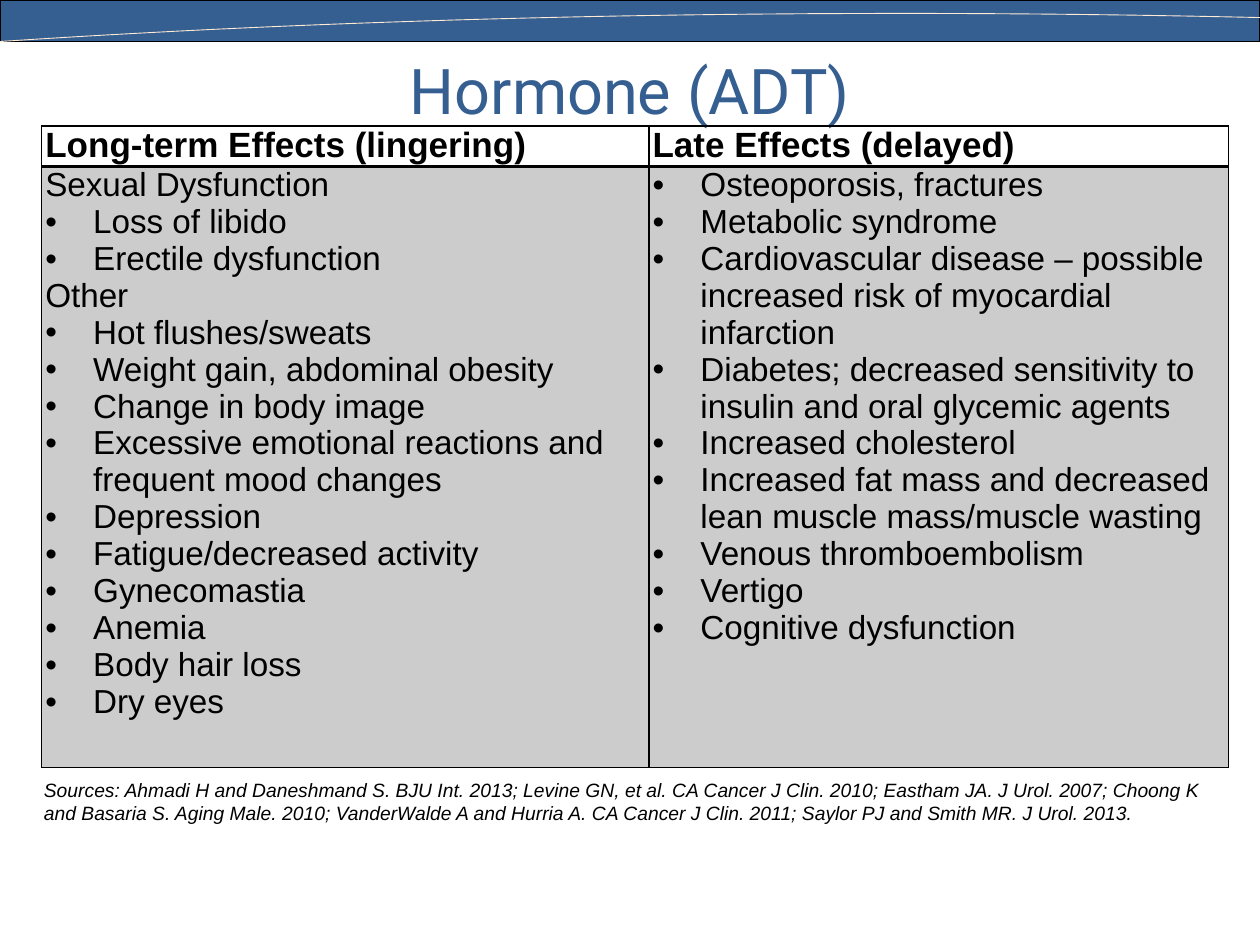
"""Build a slide listing long-term and late effects of hormone therapy (ADT)."""
from pptx import Presentation, util as u
from pptx.dml.color import RGBColor
from pptx.enum import shapes, text
from pptx.oxml import parse_xml
from pptx.oxml.ns import nsdecls

C = {"blue": "365F91", "peach": "FFEAD5", "black": "000000", "grey": "CCCCCC"}
W, H = 10, 7.5
TITLE = "Hormone (ADT)"
COLUMNS = [
    {"head": "Long-term Effects (lingering)", "share": 4.82, "tab": 0.5, "groups": [
        ("Sexual Dysfunction", ["Loss of libido", "Erectile dysfunction"]),
        ("Other", ["Hot flushes/sweats", "Weight gain, abdominal obesity",
                   "Change in body image",
                   "Excessive emotional reactions and frequent mood changes",
                   "Depression", "Fatigue/decreased activity", "Gynecomastia",
                   "Anemia", "Body hair loss", "Dry eyes"])]},
    {"head": "Late Effects (delayed)", "share": 4.6, "tab": None, "groups": [
        (None, ["Osteoporosis, fractures", "Metabolic syndrome",
                "Cardiovascular disease – possible increased risk of myocardial infarction",
                "Diabetes; decreased sensitivity to insulin and oral glycemic agents",
                "Increased cholesterol",
                "Increased fat mass and decreased lean muscle mass/muscle wasting",
                "Venous thromboembolism", "Vertigo", "Cognitive dysfunction"])]},
]
ROWS = [0.32, 4.77]
SOURCES = ("Sources: Ahmadi H and Daneshmand S. BJU Int. 2013; Levine GN, et al. "
           "CA Cancer J Clin. 2010; Eastham JA. J Urol. 2007; Choong K and Basaria S. "
           "Aging Male. 2010; VanderWalde A and Hurria A. CA Cancer J Clin. 2011; "
           "Saylor PJ and Smith MR. J Urol. 2013.")
CURVE = [(W, 0.14), (7.44, 0.08), (3.79, 0.08), (0, 0.33)]
STEPS = 40


def rgb(name):
    return RGBColor.from_string(C[name])


def style(p, size, color="black", font="Arial", bold=False, italic=False):
    for r in p.runs:
        f = r.font
        f.size, f.name, f.bold, f.italic = u.Pt(size), font, bold, italic
        f.color.rgb = rgb(color)


def outline(sp, color, width):
    sp.shadow.inherit = False
    sp.line.color.rgb, sp.line.width = rgb(color), u.Pt(width)


def bullet(p, tab, indent=0.38):
    pPr = p._p.get_or_add_pPr()
    pPr.set("marL", str(u.Inches(indent)))
    pPr.set("indent", str(-u.Inches(indent)))
    pPr.append(parse_xml(f'<a:buFont {nsdecls("a")} typeface="Arial"/>'))
    pPr.append(parse_xml(f'<a:buChar {nsdecls("a")} char="•"/>'))
    if tab:
        pPr.append(parse_xml(f'<a:tabLst {nsdecls("a")}>'
                             f'<a:tab pos="{u.Inches(tab)}" algn="l"/></a:tabLst>'))


def borders(cell, widths):
    tcPr = cell._tc.get_or_add_tcPr()
    for i, (side, width) in enumerate(zip("LRTB", widths)):
        tcPr.insert(i, parse_xml(
            f'<a:ln{side} {nsdecls("a")} w="{u.Pt(width)}"><a:solidFill>'
            f'<a:srgbClr val="{C["black"]}"/></a:solidFill></a:ln{side}>'))


def text_box(s, box, words):
    tf = s.shapes.add_textbox(*map(u.Inches, box)).text_frame
    tf.word_wrap = True
    tf.text = words
    return tf


def banner(s):
    sp = s.shapes.add_shape(shapes.MSO_SHAPE.RECTANGLE, 0, 0, u.Inches(W), u.Inches(0.33))
    sp.fill.solid()
    sp.fill.fore_color.rgb = rgb("blue")
    outline(sp, "black", 0.75)
    pts = []
    for t in (i / STEPS for i in range(STEPS + 1)):
        weights = ((1 - t) ** 3, 3 * t * (1 - t) ** 2, 3 * t * t * (1 - t), t ** 3)
        pts.append(tuple(u.Inches(sum(w * pt[k] for w, pt in zip(weights, CURVE)))
                         for k in (0, 1)))
    fb = s.shapes.build_freeform(*pts[0])
    fb.add_line_segments(pts[1:], close=False)
    arc = fb.convert_to_shape()
    arc.fill.background()
    outline(arc, "peach", 0.5)


def effects_table(s):
    width = sum(col["share"] for col in COLUMNS)
    frame = s.shapes.add_table(len(ROWS), len(COLUMNS), u.Inches(0.33), u.Inches(1),
                               u.Inches(width), u.Inches(sum(ROWS)))
    tbl = frame.table
    tbl.first_row = tbl.horz_banding = False
    for row, height in zip(tbl.rows, ROWS):
        row.height = u.Inches(height)
    for j, col in enumerate(COLUMNS):
        tbl.columns[j].width = u.Inches(col["share"])
        head, body = tbl.cell(0, j), tbl.cell(1, j)
        for cell in (head, body):
            cell.margin_left = cell.margin_right = u.Inches(0.03)
            cell.margin_top = cell.margin_bottom = 0
        head.fill.background()
        body.fill.solid()
        body.fill.fore_color.rgb = rgb("grey")
        borders(head, (1, 1, 1, 2))
        borders(body, (1, 1, 1, 1))
        head.text_frame.text = col["head"]
        style(head.text_frame.paragraphs[0], 20, bold=True)
        head.text_frame.paragraphs[0].line_spacing = u.Pt(22)
        lines = []
        for label, items in col["groups"]:
            lines += [(label, False)] if label else []
            lines += [(item, True) for item in items]
        tf = body.text_frame
        tf.text = "\n".join(line for line, _ in lines)
        for p, (_, bulleted) in zip(tf.paragraphs, lines):
            if bulleted:
                bullet(p, col["tab"])
            style(p, 19)


def main():
    prs = Presentation()
    prs.slide_width, prs.slide_height = u.Inches(W), u.Inches(H)
    s = prs.slides.add_slide(prs.slide_layouts[6])
    banner(s)
    tf = text_box(s, (0.05 * W, 0.33, 0.9 * W, 0.1 * H), TITLE)
    tf.vertical_anchor = text.MSO_ANCHOR.MIDDLE
    tf.paragraphs[0].alignment = text.PP_ALIGN.CENTER
    style(tf.paragraphs[0], 36, "blue", "Roboto")
    effects_table(s)
    tf = text_box(s, (0.25, 6.13, 9.58, 0.47), SOURCES)
    style(tf.paragraphs[0], 11, italic=True)
    prs.save("out.pptx")


if __name__ == "__main__":
    main()
